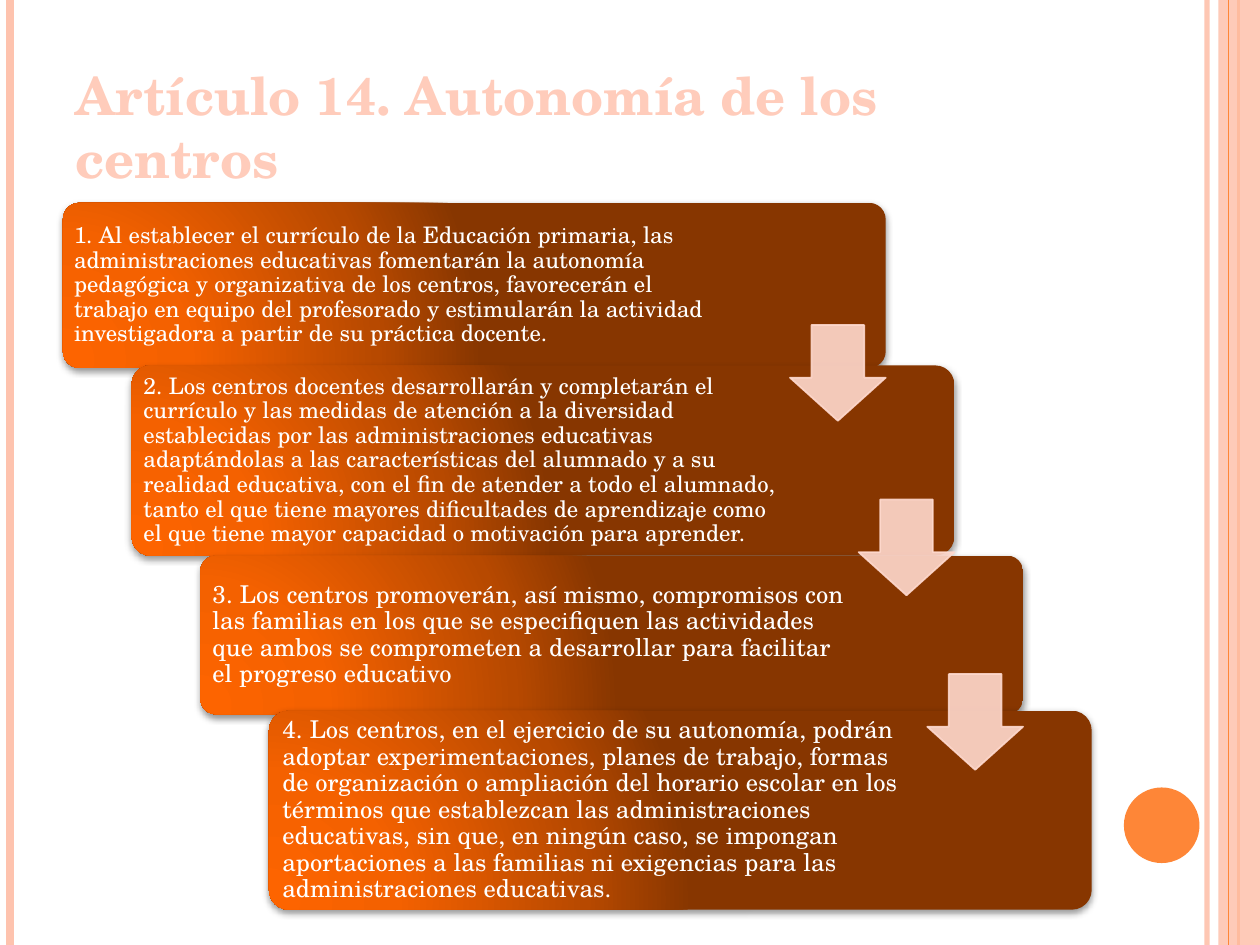
import pptx
import pptx.util
import pptx.oxml
import pptx.oxml.ns
from pptx.dml.color import RGBColor
from pptx.enum.shapes import MSO_CONNECTOR, MSO_SHAPE
from pptx.enum.text import MSO_ANCHOR, PP_ALIGN
from pptx.util import Inches, Pt

FONT = "TeX Gyre Schola"
PINK = RGBColor(0xFE, 0xC3, 0xAE)
ORANGE = RGBColor(0xFE, 0x86, 0x37)
TITLE_PINK = RGBColor(0xFF, 0xCC, 0xBB)
ARROW_PINK = RGBColor(0xFF, 0xD9, 0xCE)
WHITE = RGBColor(0xFF, 0xFF, 0xFF)
CARD_STOPS = [(0, "FD6400"), (30, "F46100"), (75, "B74900"), (100, "873600")]
NS = pptx.oxml.ns.nsdecls("a")

TITLE = "Artículo 14. Autonomía de los centros"
RULES = [(9.58, PINK, 3, 93), (0.08, PINK, 4.5, 100), (9.83, ORANGE, 1.5, 100)]
INNER_RULE = (9.75, ORANGE, 0.75, 100)
CARDS = [
    (1.61, 1.31, 13, 0.05, "1. Al establecer el currículo de la Educación primaria, las administraciones educativas fomentarán la autonomía pedagógica y organizativa de los centros, favorecerán el trabajo en equipo del profesorado y estimularán la actividad investigadora a partir de su práctica docente."),
    (2.9, 1.51, 13, 0.05, "2. Los centros docentes desarrollarán y completarán el currículo y las medidas de atención a la diversidad establecidas por las administraciones educativas adaptándolas a las características del alumnado y a su realidad educativa, con el fin de atender a todo el alumnado, tanto el que tiene mayores dificultades de aprendizaje como el que tiene mayor capacidad o motivación para aprender."),
    (4.41, 1.26, 14, 0.06, "3. Los centros promoverán, así mismo, compromisos con las familias en los que se especifiquen las actividades que ambos se comprometen a desarrollar para facilitar el progreso educativo"),
    (5.64, 1.58, 14, 0.06, "4. Los centros, en el ejercicio de su autonomía, podrán adoptar experimentaciones, planes de trabajo, formas de organización o ampliación del horario escolar en los términos que establezcan las administraciones educativas, sin que, en ningún caso, se impongan aportaciones a las familias ni exigencias para las administraciones educativas."),
]
CARD_LEFT, CARD_WIDTH, TEXT_WIDTH = 0.5, 6.53, 5.23
ARROW_LEFT, ARROW_TOP, ARROW_SIZE = 6.27, 2.58, 0.76
STEP_X, ARROW_STEP_Y = 0.545, 1.385


def set_alpha(parent, percent):
    for color in parent.iter(pptx.oxml.ns.qn("a:srgbClr")):
        color.append(pptx.oxml.parse_xml(f'<a:alpha {NS} val="{percent * 1000}"/>'))


def add_shape(s, kind, x, y, w, h, color=None):
    sp = s.shapes.add_shape(kind, Inches(x), Inches(y), Inches(w), Inches(h))
    sp.shadow.inherit = False
    sp.line.fill.background()
    if color is not None:
        sp.fill.solid()
        sp.fill.fore_color.rgb = color
    return sp


def add_rule(s, x, color, width, alpha):
    line = s.shapes.add_connector(MSO_CONNECTOR.STRAIGHT, Inches(x), 0, Inches(x), Inches(7.5))
    line.line.color.rgb = color
    line.line.width = Pt(width)
    props = line._element.spPr
    props.append(pptx.oxml.parse_xml(f"<a:effectLst {NS}/>"))
    if alpha < 100:
        set_alpha(props, alpha)


def style_card(sp):
    sp.fill.background()
    props = sp._element.spPr
    stops = "".join(f'<a:gs pos="{pos * 1000}"><a:srgbClr val="{color}"/></a:gs>'
                    for pos, color in CARD_STOPS)
    gradient = pptx.oxml.parse_xml(
        f'<a:gradFill {NS} rotWithShape="1"><a:gsLst>{stops}</a:gsLst><a:path path="circle">'
        '<a:fillToRect l="5000" t="100000" r="120000" b="10000"/></a:path></a:gradFill>')
    props.replace(props.find(pptx.oxml.ns.qn("a:noFill")), gradient)
    shadow = pptx.oxml.parse_xml(
        f'<a:outerShdw {NS} blurRad="{Pt(4)}" dist="{Pt(1.6)}" dir="5400000" rotWithShape="0">'
        '<a:srgbClr val="000000"><a:alpha val="42000"/></a:srgbClr></a:outerShdw>')
    props.find(pptx.oxml.ns.qn("a:effectLst")).append(shadow)


def set_text(tf, text, size, color, anchor):
    tf.word_wrap = True
    tf.vertical_anchor = anchor
    p = tf.paragraphs[0]
    p.text = text
    p.alignment = PP_ALIGN.LEFT
    p.font.name = FONT
    p.font.size = Pt(size)
    p.font.color.rgb = color
    return p


def add_card(s, x, y, h, size, inset, text):
    sp = add_shape(s, MSO_SHAPE.ROUNDED_RECTANGLE, x, y, CARD_WIDTH, h)
    sp.adjustments[0] = 0.1
    style_card(sp)
    tf = sp.text_frame
    tf.margin_left = tf.margin_top = tf.margin_bottom = Inches(inset)
    tf.margin_right = Inches(CARD_WIDTH - TEXT_WIDTH + inset)
    p = set_text(tf, text, size, WHITE, MSO_ANCHOR.MIDDLE)
    p.line_spacing = 0.9


def add_arrow(s, x, y):
    sp = add_shape(s, MSO_SHAPE.DOWN_ARROW, x, y, ARROW_SIZE, ARROW_SIZE, ARROW_PINK)
    sp.adjustments[0] = 0.55
    sp.adjustments[1] = 0.45
    sp.line.color.rgb = ARROW_PINK
    sp.line.width = Pt(1)
    set_alpha(sp._element.spPr, 90)


def main():
    prs = pptx.Presentation()
    prs.slide_width, prs.slide_height = Inches(10), Inches(7.5)
    s = prs.slides.add_slide(prs.slide_layouts[6])

    for rule in RULES:
        add_rule(s, *rule)
    band = add_shape(s, MSO_SHAPE.RECTANGLE, 9.67, 0, 0.33, 7.5, PINK)
    set_alpha(band._element.spPr, 87)
    add_rule(s, *INNER_RULE)
    add_shape(s, MSO_SHAPE.OVAL, 8.92, 6.25, 0.6, 0.6, ORANGE)

    title = s.shapes.add_textbox(Inches(0.5), Inches(0.3), Inches(8.17), Inches(1.25))
    p = set_text(title.text_frame, TITLE, 30, TITLE_PINK, MSO_ANCHOR.BOTTOM)
    p.font.bold = True

    for i, (y, h, size, inset, text) in enumerate(CARDS):
        add_card(s, CARD_LEFT + i * STEP_X, y, h, size, inset, text)
    for i in range(len(CARDS) - 1):
        add_arrow(s, ARROW_LEFT + i * STEP_X, ARROW_TOP + i * ARROW_STEP_Y)

    prs.save("out.pptx")


if __name__ == "__main__":
    main()
